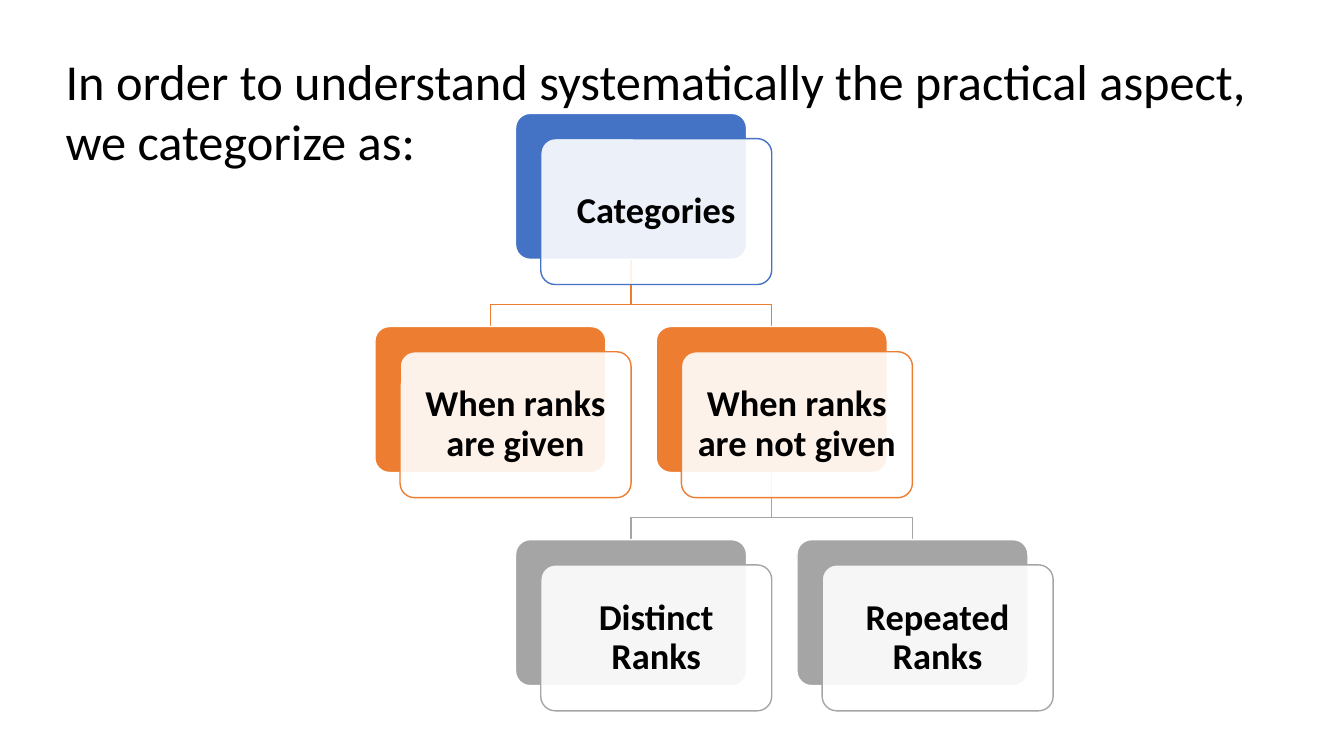
from lxml.etree import SubElement
from pptx import Presentation
from pptx.dml.color import RGBColor
from pptx.enum.shapes import MSO_SHAPE as Shape
from pptx.enum.text import MSO_ANCHOR as Anchor, PP_ALIGN as Align
from pptx.oxml.ns import qn
from pptx.util import Pt

EMU_PER_PX = 9525
COLORS = {
    "text": "000000",
    "white": "FFFFFF",
    "root": "4472C4",
    "branch": "ED7D31",
    "leaf": "A5A5A5",
}
TITLE = "In order to understand systematically the practical aspect, we categorize as:"

# Tree geometry: columns are half a card pitch apart
CARD_WIDTH, CARD_HEIGHT = 220, 139
FRONT_OFFSET = 24
FRONT_INSET = 11
TREE_LEFT, COLUMN_STEP = 357, 134
TREE_TOP, ROW_STEP = 108, 203
BEND_DROP = 43

# Text, column, row, colour
CARDS = [
    ("Categories", 1, 0, "root"),
    ("When ranks are given", 0, 1, "branch"),
    ("When ranks are not given", 2, 1, "branch"),
    ("Distinct Ranks", 1, 2, "leaf"),
    ("Repeated Ranks", 3, 2, "leaf"),
]
# Parent column, child column, parent row, colour
LINKS = [
    (2, 3, 1, "leaf"),
    (2, 1, 1, "leaf"),
    (1, 2, 0, "branch"),
    (1, 0, 0, "branch"),
]


def px(length):
    return int(length * EMU_PER_PX)


def rgb(name):
    return RGBColor.from_string(COLORS[name])


def card_position(column, row):
    return TREE_LEFT + column * COLUMN_STEP, TREE_TOP + row * ROW_STEP


def set_line(shape, color):
    shape.line.color.rgb = rgb(color)
    shape.line.width = Pt(1)
    shape.shadow.inherit = False


def write_text(shape, text, font_format, paragraph_format, frame_format):
    frame = shape.text_frame
    frame.word_wrap = True
    paragraph = frame.paragraphs[0]
    run = paragraph.add_run()
    run.text = text
    run.font.color.rgb = rgb("text")
    for target, values in (
        (frame, frame_format),
        (paragraph, paragraph_format),
        (run.font, {"name": "Calibri", **font_format}),
    ):
        for name, value in values.items():
            setattr(target, name, value)


def add_title(slide, text):
    box = slide.shapes.add_textbox(px(53), px(43), px(1170), px(126))
    write_text(box, text, {"size": Pt(36)}, {"alignment": Align.LEFT}, {})


def add_link(slide, parent_column, child_column, row, color):
    parent_left, parent_top = card_position(parent_column, row)
    child_left, child_top = card_position(child_column, row + 1)
    start_x, end_x = (left + CARD_WIDTH // 2 for left in (parent_left, child_left))
    start_y = parent_top + CARD_HEIGHT
    bend_y = start_y + BEND_DROP
    builder = slide.shapes.build_freeform(start_x, start_y, scale=EMU_PER_PX)
    builder.add_line_segments(
        [(start_x, bend_y), (end_x, bend_y), (end_x, child_top)], close=False
    )
    link = builder.convert_to_shape()
    link.fill.background()
    set_line(link, color)


def add_panel(slide, left, top, fill, line):
    panel = slide.shapes.add_shape(
        Shape.ROUNDED_RECTANGLE, px(left), px(top), px(CARD_WIDTH), px(CARD_HEIGHT)
    )
    panel.adjustments[0] = 0.1
    panel.fill.solid()
    panel.fill.fore_color.rgb = rgb(fill)
    set_line(panel, line)
    return panel


def set_opacity(shape, percent):
    color = shape.fill._xPr.find(qn("a:solidFill"))[0]
    SubElement(color, qn("a:alpha")).set("val", str(percent * 1000))


def add_card(slide, text, column, row, color):
    left, top = card_position(column, row)
    add_panel(slide, left, top, color, "white")
    front = add_panel(slide, left + FRONT_OFFSET, top + FRONT_OFFSET, "white", color)
    set_opacity(front, 90)
    margins = {
        f"margin_{side}": px(FRONT_INSET) for side in ("left", "top", "right", "bottom")
    }
    write_text(
        front,
        text,
        {"size": Pt(26), "bold": True},
        {"alignment": Align.CENTER, "line_spacing": 0.9},
        {"vertical_anchor": Anchor.MIDDLE, **margins},
    )


def main():
    presentation = Presentation()
    presentation.slide_width = px(1280)
    presentation.slide_height = px(720)
    slide = presentation.slides.add_slide(presentation.slide_layouts[6])

    # Heading
    add_title(slide, TITLE)

    # Links lie behind the cards
    for link in LINKS:
        add_link(slide, *link)
    for card in CARDS:
        add_card(slide, *card)

    presentation.save("out.pptx")


if __name__ == "__main__":
    main()
